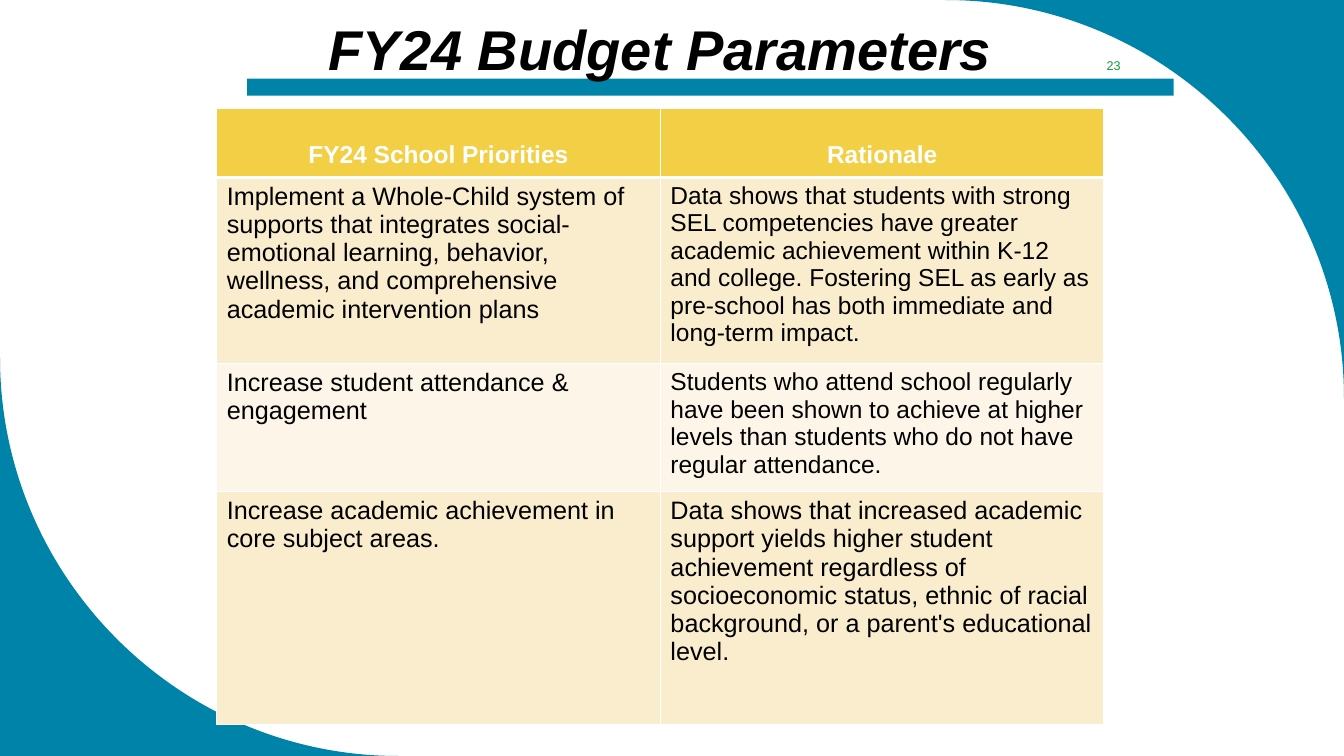
from dataclasses import dataclass

from lxml.etree import SubElement
from pptx import Presentation
from pptx.dml.color import RGBColor
from pptx.enum.shapes import MSO_SHAPE
from pptx.enum.text import MSO_ANCHOR as ANCHOR, PP_ALIGN as ALIGN
from pptx.oxml.ns import qn
from pptx.util import Inches, Pt

COLORS = {
    "teal": "0083A9", "gold": "F3CF45", "cream": "FAEDCE", "pale": "FDF6E8",
    "white": "FFFFFF", "black": "000000", "green": "159839",
}
FONT = "Arial"
WIDTH, HEIGHT, RADIUS = 13.33, 7.5, 3.95
ARC = 0.55  # control point distance of a quarter circle
Point = tuple[float, float]


@dataclass
class Corner:
    start: Point
    end: Point
    tip: Point


@dataclass
class Label:
    text: str
    box: tuple[float, float, float, float]
    size: float
    color: str
    anchor: ANCHOR
    bold: bool = False
    italic: bool = False


@dataclass
class Row:
    cells: tuple[str, str]
    height: float
    fill: str
    sizes: tuple[float, float]


CORNERS = [
    Corner((WIDTH - RADIUS, 0), (WIDTH, RADIUS), (WIDTH, 0)),
    Corner((RADIUS, HEIGHT), (0, HEIGHT - RADIUS), (0, HEIGHT)),
]
TITLE = Label("FY24 Budget Parameters", (3.05, 0.09, 6.99, 0.77), 40, "black",
              ANCHOR.TOP, bold=True, italic=True)
PAGE_NUMBER = Label("23", (10.64, 0.5, 0.81, 0.3), 9, "green", ANCHOR.MIDDLE)
ROWS = [
    Row(("FY24 School Priorities", "Rationale"), 0.68, "gold", (17.5, 17.5)),
    Row(("Implement a Whole-Child system of supports that integrates "
         "social-emotional learning, behavior, wellness, and comprehensive "
         "academic intervention plans",
         "Data shows that students with strong SEL competencies have greater "
         "academic achievement within K-12 and college. Fostering SEL as early "
         "as pre-school has both immediate and long-term impact."),
        1.84, "cream", (18, 17.5)),
    Row(("Increase student attendance & engagement",
         "Students who attend school regularly have been shown to achieve at "
         "higher levels than students who do not have regular attendance."),
        1.27, "pale", (18, 17.5)),
    Row(("Increase academic achievement in core subject areas.",
         "Data shows that increased academic support yields higher student "
         "achievement regardless of socioeconomic status, ethnic of racial "
         "background, or a parent's educational level."),
        2.31, "cream", (18, 18)),
]


def rgb(name: str) -> RGBColor:
    return RGBColor.from_string(COLORS[name])


def paint(sp, color: str) -> None:
    sp.shadow.inherit = False
    sp.fill.solid()
    sp.fill.fore_color.rgb = rgb(color)
    sp.line.fill.background()


def style(p, size: float, color: str, bold: bool = False,
          italic: bool = False) -> None:
    for r in p.runs:
        r.font.name, r.font.size = FONT, Pt(size)
        r.font.bold, r.font.italic = bold, italic
        r.font.color.rgb = rgb(color)


def add_corner(s, corner: Corner) -> None:
    start, end, tip = (tuple(map(Inches, point))
                       for point in (corner.start, corner.end, corner.tip))
    outline = s.shapes.build_freeform(*start)
    outline.add_line_segments([end, tip])
    sp = outline.convert_to_shape()
    paint(sp, "teal")

    # Bend the first segment into a quarter circle
    line = next(sp._element.iter(qn("a:lnTo")))
    curve = SubElement(line.getparent(), qn("a:cubicBezTo"))
    line.getparent().replace(line, curve)
    controls = [tuple(round(a + (b - a) * ARC) for a, b in zip(point, tip))
                for point in (start, end)]
    for x, y in controls + [end]:
        SubElement(curve, qn("a:pt"), x=str(x - sp.left), y=str(y - sp.top))


def add_label(s, label: Label) -> None:
    tf = s.shapes.add_textbox(*map(Inches, label.box)).text_frame
    tf.word_wrap = True
    tf.vertical_anchor = label.anchor
    tf.text = label.text
    p = tf.paragraphs[0]
    p.alignment = ALIGN.CENTER
    style(p, label.size, label.color, label.bold, label.italic)


def add_borders(cell, bottom: float) -> None:
    tc_pr = cell._tc.get_or_add_tcPr()
    widths = {"a:lnL": 1, "a:lnR": 1, "a:lnT": 1, "a:lnB": bottom}
    for position, (tag, width) in enumerate(widths.items()):
        ln = SubElement(tc_pr, qn(tag), w=str(Pt(width)))
        fill = SubElement(ln, qn("a:solidFill"))
        SubElement(fill, qn("a:srgbClr"), val=COLORS["white"])
        tc_pr.insert(position, ln)  # borders come before the fill


def add_priorities(s, rows: list[Row]) -> None:
    total = sum(row.height for row in rows)
    table = s.shapes.add_table(len(rows), 2, Inches(2.15), Inches(1.08),
                               Inches(8.8), Inches(total)).table
    for column in table.columns:
        column.width = Inches(4.4)
    for i, row in enumerate(rows):
        header = i == 0
        table.rows[i].height = Inches(row.height)
        for j, (text, size) in enumerate(zip(row.cells, row.sizes)):
            cell = table.cell(i, j)
            cell.fill.solid()
            cell.fill.fore_color.rgb = rgb(row.fill)
            cell.vertical_anchor = ANCHOR.BOTTOM if header else ANCHOR.TOP
            cell.margin_bottom = Inches(0.09 if header else 0.05)
            cell.text_frame.text = text
            p = cell.text_frame.paragraphs[0]
            p.alignment = ALIGN.CENTER if header else ALIGN.LEFT
            style(p, size, "white" if header else "black", bold=header)
            add_borders(cell, 3 if header else 1)


def main() -> None:
    prs = Presentation()
    prs.slide_width, prs.slide_height = Inches(WIDTH), Inches(HEIGHT)
    s = prs.slides.add_slide(prs.slide_layouts[6])

    # Rounded corners
    for corner in CORNERS:
        add_corner(s, corner)

    # Bar under the title
    bar = s.shapes.add_shape(MSO_SHAPE.RECTANGLE, Inches(2.45), Inches(0.78),
                             Inches(9.19), Inches(0.17))
    paint(bar, "teal")

    # Title, table and page number
    add_label(s, TITLE)
    add_priorities(s, ROWS)
    add_label(s, PAGE_NUMBER)

    prs.save("out.pptx")


if __name__ == "__main__":
    main()
